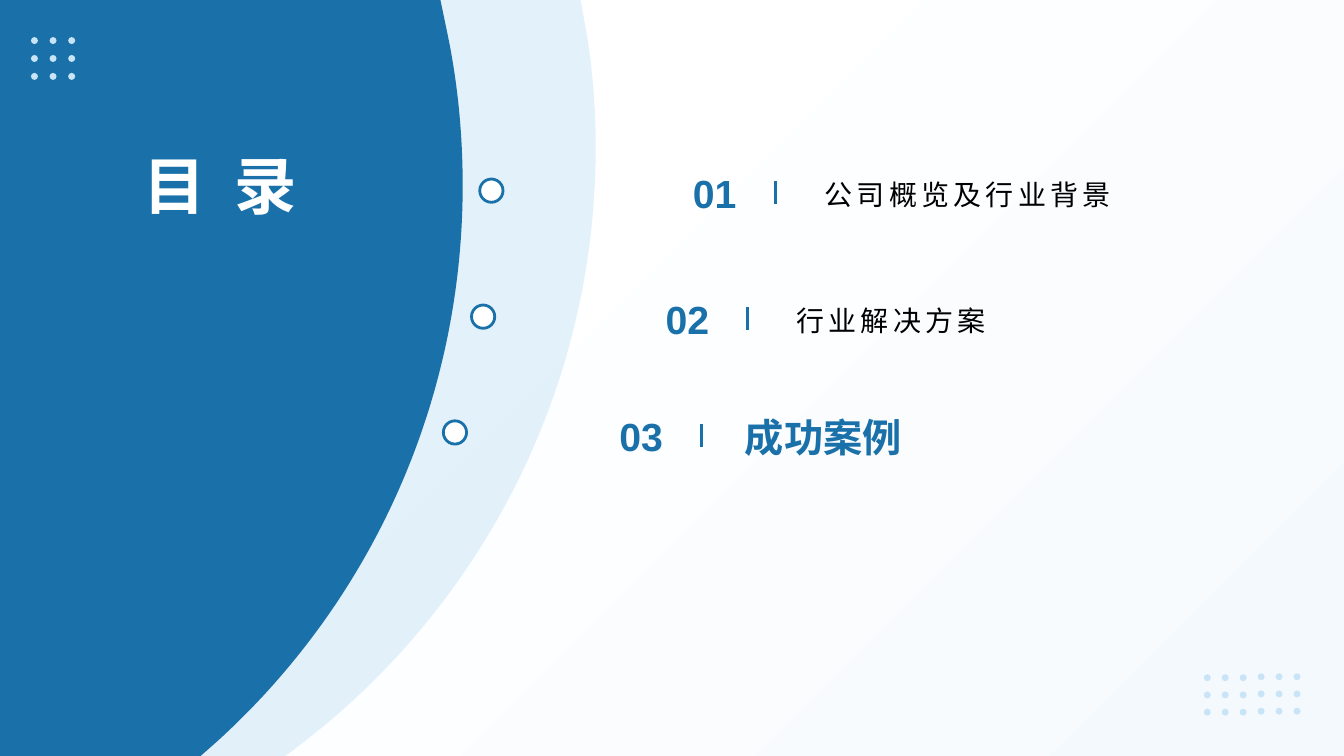
"""Builds a table-of-contents slide with curved panels and three numbered entries."""
from dataclasses import dataclass

from lxml import etree
from pptx import Presentation
from pptx.dml.color import RGBColor
from pptx.enum.shapes import MSO_CONNECTOR, MSO_SHAPE
from pptx.enum.text import MSO_ANCHOR, PP_ALIGN
from pptx.oxml.ns import qn
from pptx.util import Pt

STRAIGHT = MSO_CONNECTOR.STRAIGHT
RECTANGLE, OVAL = MSO_SHAPE.RECTANGLE, MSO_SHAPE.OVAL
MIDDLE, BOTTOM = MSO_ANCHOR.MIDDLE, MSO_ANCHOR.BOTTOM
LEFT, CENTER = PP_ALIGN.LEFT, PP_ALIGN.CENTER


@dataclass(frozen=True)
class Theme:
    blue: RGBColor = RGBColor(0x1A, 0x71, 0xAA)
    pale: RGBColor = RGBColor(0xC9, 0xE4, 0xF7)
    mist: RGBColor = RGBColor(0xF4, 0xF9, 0xFD)
    white: RGBColor = RGBColor(0xFF, 0xFF, 0xFF)
    black: RGBColor = RGBColor(0, 0, 0)
    font: str = "Arial"
    title_size: float = 44.5
    strong_size: float = 28
    label_size: float = 20


theme = Theme()
WIDTH, HEIGHT = 960, 540

presentation = Presentation()
presentation.slide_width, presentation.slide_height = Pt(WIDTH), Pt(HEIGHT)
slide = presentation.slides.add_slide(presentation.slide_layouts[6])
shapes = slide.shapes


def add_outline(contours, color):
    """Draw contours of one-point lines and three-point curves as one filled shape."""
    builder = None
    segments = []
    for start, *parts in contours:
        origin = tuple(map(Pt, start[0]))
        if builder is None:
            builder = shapes.build_freeform(*origin)
        else:
            builder.move_to(*origin)
        points = [(Pt(x), Pt(y)) for part in parts for x, y in part]
        builder.add_line_segments(points, close=True)
        segments += parts
    shape = builder.convert_to_shape()
    lines = iter(list(shape._element.iter(qn("a:lnTo"))))
    for segment in segments:
        first, *others = [next(lines) for _ in segment]
        if others:
            first.tag = qn("a:cubicBezTo")
        for line in others:
            first.append(line[0])
            line.getparent().remove(line)
    shape.shadow.inherit = False
    shape.fill.solid()
    shape.fill.fore_color.rgb = color
    shape.line.fill.background()
    return shape


def add_text(text, box, size, color, bold=True, align=LEFT, anchor=MIDDLE, wrap=True):
    """Add a text box without margins and return its paragraph."""
    frame = shapes.add_textbox(*map(Pt, box)).text_frame
    frame.margin_left = frame.margin_right = frame.margin_top = frame.margin_bottom = 0
    frame.word_wrap, frame.vertical_anchor = wrap, anchor
    frame.text = text
    paragraph = frame.paragraphs[0]
    paragraph.alignment = align
    font = paragraph.runs[0].font
    font.name, font.size, font.bold = theme.font, Pt(size), bold
    font.color.rgb = color
    return paragraph


backdrop = shapes.add_shape(RECTANGLE, 0, 0, Pt(WIDTH), Pt(HEIGHT))
backdrop.shadow.inherit = False
backdrop.line.fill.background()
backdrop.fill.gradient()
backdrop.fill.gradient_angle = 315
for stop, position, color in zip(
    backdrop.fill.gradient_stops, (0.3, 1), (theme.white, theme.mist)
):
    stop.position, stop.color.rgb = position, color

PANELS = [
    (theme.pale, [
        [(0, 0)], [(414.7, 0)], [(419, 23.8)],
        [(423.4, 50.4), (425.5, 77.8), (425.5, 105.1)],
        [(425.5, 281.5), (340.6, 437.8), (209.5, 535.7)],
        [(203.8, HEIGHT)], [(0, HEIGHT)],
    ]),
    (theme.blue, [
        [(0, 0)], [(314.6, 0)], [(319.7, 24.5)],
        [(326.9, 59), (330.5, 95.8), (330.5, 132.5)],
        [(330.5, 290.2), (262.8, 432), (154.8, 529.9)],
        [(143.3, HEIGHT)], [(0, HEIGHT)],
    ]),
]
panels = [add_outline([contour], color) for color, contour in PANELS]
pale_color = panels[0].fill._xPr.find(".//" + qn("a:srgbClr"))
etree.SubElement(pale_color, qn("a:alpha")).set("val", "50000")

RADIUS, HANDLE = 2.5, 1.38
QUARTERS = [(1, 0), (0, 1), (-1, 0), (0, -1)]
corner_dots = [(24.6 + 13.3 * column, 29 + 12.8 * row) for row in range(3) for column in range(3)]
footer_dots = [
    (862.4 + 12.82 * column, (484.1 if column < 3 else 483.4) + 12.3 * row)
    for row in range(3)
    for column in range(6)
]
for centers in (corner_dots, footer_dots):
    circles = [
        [[(x + RADIUS, y)]] + [
            [
                (x + RADIUS * a - HANDLE * b, y + RADIUS * b + HANDLE * a),
                (x - RADIUS * b + HANDLE * a, y + RADIUS * a + HANDLE * b),
                (x - RADIUS * b, y + RADIUS * a),
            ]
            for a, b in QUARTERS
        ]
        for x, y in centers
    ]
    add_outline(circles, theme.pale)

add_text("目  录", (42, 73.6, 230.4, 85), theme.title_size, theme.white,
         align=CENTER, anchor=BOTTOM)

ENTRIES = [
    ("公司概览及行业背景", 110.2, (342.7, 127.9), 478.1, (589, 110.2), 322.6, False),
    ("行业解决方案", 200.2, (336.8, 217.9), 458.6, (568.8, 200.2), 360.7, False),
    ("成功案例", 283.7, (316.7, 300.6), 425.5, (532.1, 284.4), 322.6, True),
]
ROW_HEIGHT, MARKER_SIZE, RULE_HEIGHT = 54.7, 16.6, 16.3
for number, (label, top, marker_corner, number_left, label_corner, label_width, current) in enumerate(
    ENTRIES, 1
):
    marker = shapes.add_shape(OVAL, *map(Pt, marker_corner), Pt(MARKER_SIZE), Pt(MARKER_SIZE))
    marker.shadow.inherit = False
    marker.fill.solid()
    marker.fill.fore_color.rgb = theme.white

    add_text(f"{number:02}", (number_left, top, 64.8, ROW_HEIGHT), theme.strong_size,
             theme.blue, align=CENTER, wrap=False)

    rule_x, rule_top = number_left + 75.6, top + 19.4
    rule = shapes.add_connector(
        STRAIGHT, Pt(rule_x), Pt(rule_top), Pt(rule_x), Pt(rule_top + RULE_HEIGHT)
    )
    etree.SubElement(rule._element.spPr, qn("a:effectLst"))
    for item in (marker, rule):
        item.line.color.rgb, item.line.width = theme.blue, Pt(2)

    label_box = (*label_corner, label_width, ROW_HEIGHT)
    if current:
        add_text(label, label_box, theme.strong_size, theme.blue)
    else:
        paragraph = add_text(label, label_box, theme.label_size, theme.black, bold=False)
        paragraph.line_spacing = 1.1
        paragraph.runs[0].font._element.set("spc", "300")

presentation.save("out.pptx")
